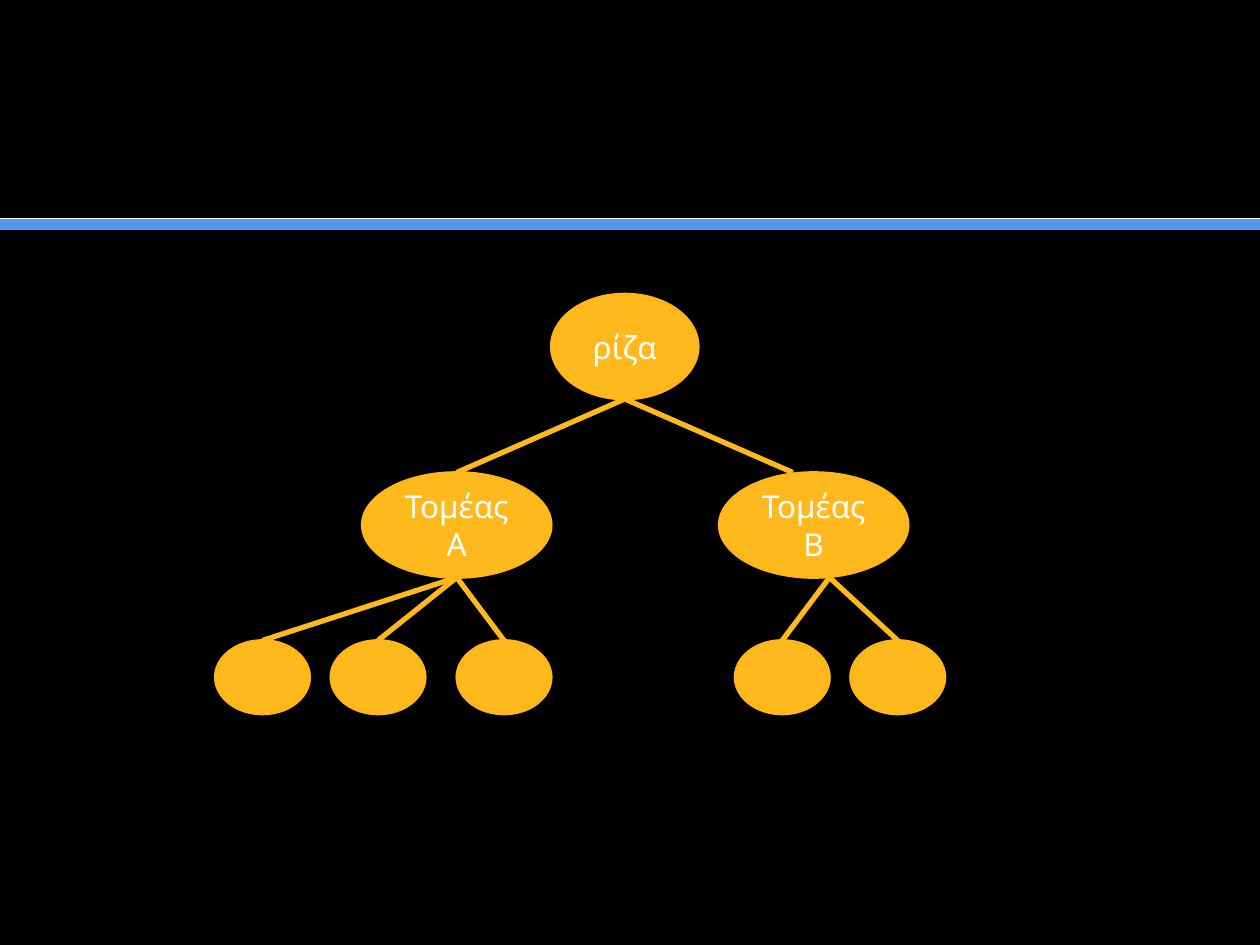
from pptx import Presentation
from pptx.dml.color import RGBColor
from pptx.enum.shapes import MSO_CONNECTOR, MSO_SHAPE
from pptx.enum.text import MSO_ANCHOR, PP_ALIGN
from pptx.oxml.ns import qn
from pptx.util import Pt

STRAIGHT = MSO_CONNECTOR.STRAIGHT
ELLIPSE = MSO_SHAPE.OVAL
MIDDLE = MSO_ANCHOR.MIDDLE
CENTER = PP_ALIGN.CENTER

COLORS = {
    "background": "000000",
    "band": "5799E8",
    "white": "FFFFFF",
    "node": "FFB91D",
    "outline": "FFB717",
}
FONT = "Cabin"
WIDTH, HEIGHT = 720, 540
NODE_HEIGHT = 60
ROOT_TOP, SECTOR_TOP, LEAF_TOP = 168, 270, 366
ROOT_CENTER, ROOT_WIDTH = 357, 84
SECTOR_WIDTH = 108
LEAF_WIDTH, LEAF_HEIGHT = 54, 42
SECTORS = [
    {"label": "Τομέας Α", "center": 261, "entry": 261, "exit": 261,
     "leaves": [150, 216, 288]},
    {"label": "Τομέας Β", "center": 465, "entry": 453, "exit": 474,
     "leaves": [447, 513]},
]


def color(name):
    """Return the named palette colour."""
    return RGBColor.from_string(COLORS[name])


def add_line(page, start, end, *, stroke="node", weight=3):
    """Draw a straight connector without a shadow."""
    line = page.shapes.add_connector(STRAIGHT, *map(Pt, start + end))
    line.line.color.rgb = color(stroke)
    line.line.width = Pt(weight)
    properties = line._element.spPr
    properties.append(properties.makeelement(qn("a:effectLst"), {}))


def write_text(shape, text, *, size=18, font=FONT, fill="white", align=CENTER):
    """Write one formatted paragraph inside a shape."""
    frame = shape.text_frame
    frame.word_wrap = True
    frame.vertical_anchor = MIDDLE
    para = frame.paragraphs[0]
    para.alignment = align
    span = para.add_run()
    span.text = text
    span.font.size = Pt(size)
    span.font.name = font
    span.font.color.rgb = color(fill)


def add_node(page, center, top, width, height, label=None):
    """Draw a tree node centred on a horizontal position."""
    node = page.shapes.add_shape(
        ELLIPSE, Pt(center - width / 2), Pt(top), Pt(width), Pt(height))
    node.shadow.inherit = False
    node.fill.solid()
    node.fill.fore_color.rgb = color("node")
    node.line.color.rgb = color("outline")
    node.line.width = Pt(1.5)
    if label:
        write_text(node, label)


def add_sector(page, sector):
    """Draw a sector with its leaves and the lines joining them."""
    add_node(page, sector["center"], SECTOR_TOP, SECTOR_WIDTH, NODE_HEIGHT,
             sector["label"])
    add_line(page, (ROOT_CENTER, ROOT_TOP + NODE_HEIGHT),
             (sector["entry"], SECTOR_TOP))
    for center in sector["leaves"]:
        add_node(page, center, LEAF_TOP, LEAF_WIDTH, LEAF_HEIGHT)
        add_line(page, (sector["exit"], SECTOR_TOP + NODE_HEIGHT),
                 (center, LEAF_TOP))


def main():
    """Build the tree slide and save the deck."""
    deck = Presentation()
    deck.slide_width, deck.slide_height = Pt(WIDTH), Pt(HEIGHT)
    page = deck.slides.add_slide(deck.slide_layouts[6])
    page.background.fill.solid()
    page.background.fill.fore_color.rgb = color("background")
    add_line(page, (0, 128.2), (WIDTH, 128.2), stroke="band", weight=7)
    add_line(page, (0, 124.6), (WIDTH, 124.6), stroke="white", weight=0.5)
    add_node(page, ROOT_CENTER, ROOT_TOP, ROOT_WIDTH, NODE_HEIGHT, "ρίζα")
    for sector in SECTORS:
        add_sector(page, sector)
    deck.save("out.pptx")


if __name__ == "__main__":
    main()
